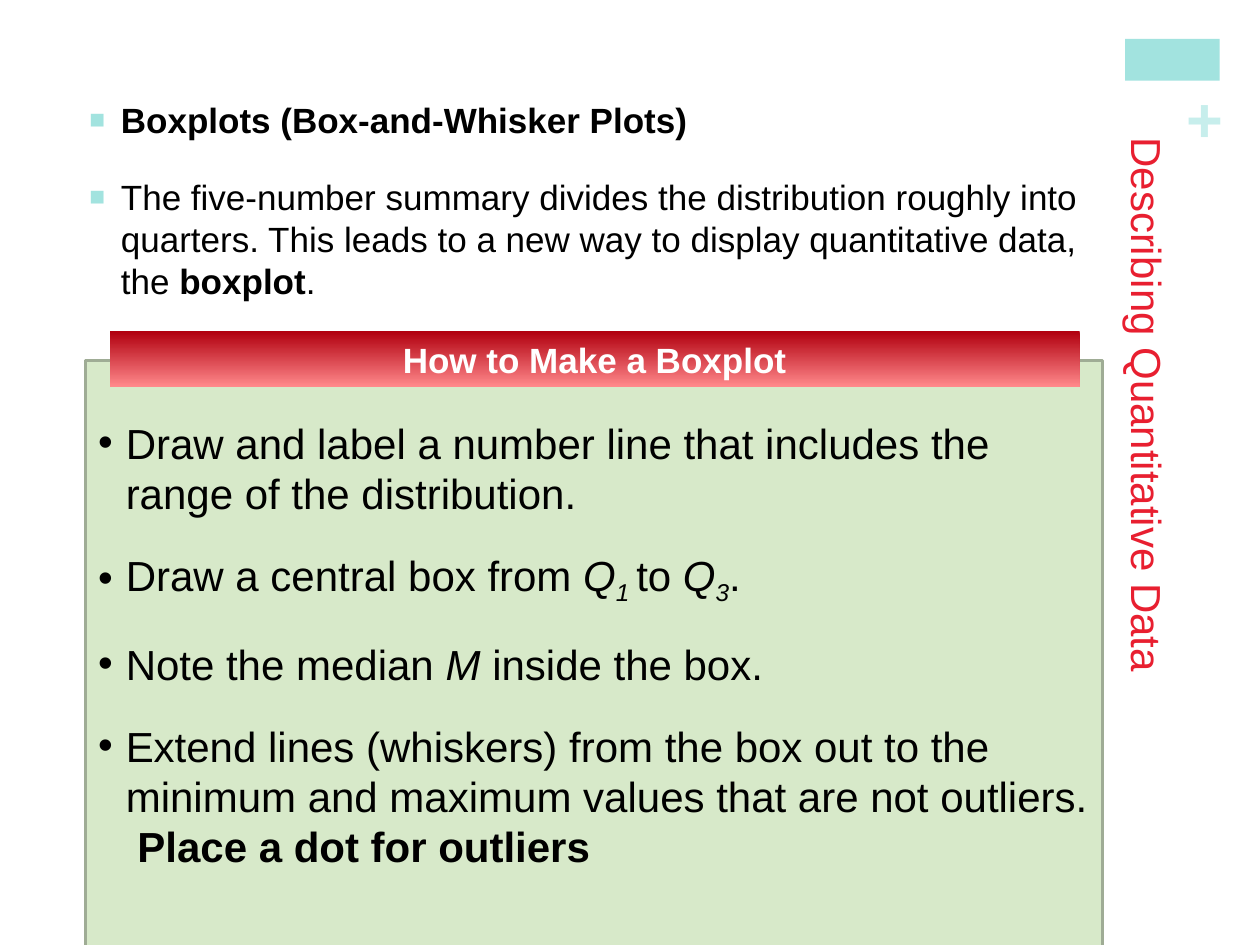
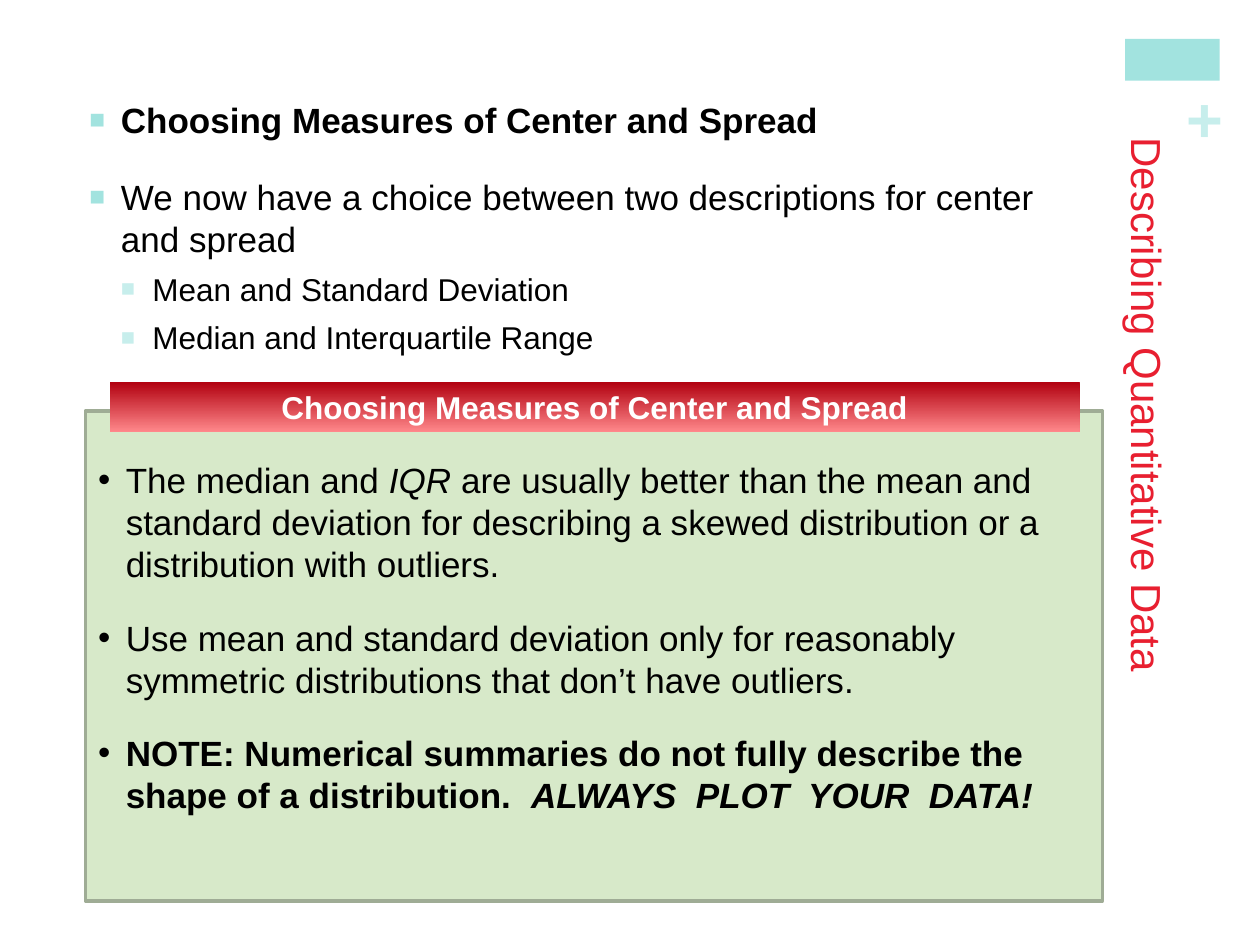
from pptx import Presentation
from pptx import util as u
from pptx.dml.color import RGBColor
from pptx.enum import shapes, text
from pptx.oxml.ns import qn
from lxml import etree

PX = 9144  # one px is a hundredth of an inch
FONT = "Arial"
COLORS = {
    "black": "000000", "white": "FFFFFF", "title": "E81F30",
    "teal": "A2E3DF", "pale teal": "C7EEEC",
    "panel": "D7E9C9", "panel line": "9FAC95",
    "banner top": "B1000F", "banner bottom": "FF888B",
}
PANEL_LEFT, PANEL_WIDTH = 68, 807
BANNER_LEFT, BANNER_WIDTH = 87, 770


def px(*lengths):
    return [u.Emu(length * PX) for length in lengths]


def color(name):
    return RGBColor.from_string(COLORS[name])


def set_bullet(paragraph, char, indent, hang, tint=None, percent=100):
    properties = paragraph._p.get_or_add_pPr()
    properties.set("marL", str(indent * PX))
    properties.set("indent", str(-hang * PX))
    if tint:
        holder = etree.SubElement(properties, qn("a:buClr"))
        etree.SubElement(holder, qn("a:srgbClr"), val=COLORS[tint])
    etree.SubElement(properties, qn("a:buSzPct"), val=str(percent * 1000))
    etree.SubElement(properties, qn("a:buFont"), typeface=FONT)
    etree.SubElement(properties, qn("a:buChar"), char=char)


def write(paragraph, runs, size=20, tint="black", bold=False, before=0, after=0,
          align=text.PP_ALIGN.LEFT, bullet=None):
    """Runs are plain strings or (string, flags): b bold, i italic, s subscript."""
    paragraph.alignment = align
    paragraph.space_before, paragraph.space_after = u.Pt(before), u.Pt(after)
    if bullet:
        set_bullet(paragraph, **bullet)
    for item in [runs] if isinstance(runs, str) else runs:
        content, flags = (item, "") if isinstance(item, str) else item
        run = paragraph.add_run()
        run.text = content
        font = run.font
        font.name, font.size, font.color.rgb = FONT, u.Pt(size), color(tint)
        font.bold, font.italic = bold or "b" in flags, "i" in flags
        if "s" in flags:
            font._element.set("baseline", "-25000")


def set_frame(shape, left=10, top=5, right=10, bottom=5, anchor=text.MSO_ANCHOR.TOP):
    frame = shape.text_frame
    frame.word_wrap = True
    frame.auto_size = text.MSO_AUTO_SIZE.NONE
    frame.vertical_anchor = anchor
    (frame.margin_left, frame.margin_top,
     frame.margin_right, frame.margin_bottom) = px(left, top, right, bottom)
    return frame


def paragraphs(frame):
    yield frame.paragraphs[0]
    while True:
        yield frame.add_paragraph()


def add_rectangle(slide, box, fill=None, line=None):
    shape = slide.shapes.add_shape(shapes.MSO_SHAPE.RECTANGLE, *px(*box))
    shape.shadow.inherit = False
    if fill:
        shape.fill.solid()
        shape.fill.fore_color.rgb = color(fill)
    if line:
        shape.line.color.rgb, shape.line.width = color(line), u.Pt(2)
    else:
        shape.line.fill.background()
    return shape


def add_corner_mark(slide):
    add_rectangle(slide, (893, 31, 75, 33), "teal")
    plus = slide.shapes.add_textbox(*px(942, 63, 28, 58))
    frame = set_frame(plus, 0, 0, 0, 0)
    frame.word_wrap = False
    write(frame.paragraphs[0], "+", size=36, tint="pale teal", bold=True)


def add_side_title(slide):
    title = slide.shapes.title
    title.left, title.top, title.width, title.height = px(874, 104, 74, 566)
    frame = set_frame(title, anchor=text.MSO_ANCHOR.MIDDLE)
    frame._txBody.bodyPr.set("vert", "eaVert")
    write(frame.paragraphs[0], "Describing Quantitative Data", size=24, tint="title")


def add_intro(slide, heading, statement, choices=()):
    box = slide.shapes.add_textbox(*px(66, 65, PANEL_WIDTH, 238))
    lines = paragraphs(set_frame(box, left=5, top=13, right=5))
    square = dict(char="■", indent=25, hang=25, tint="teal", percent=75)
    write(next(lines), heading, bold=True, bullet=square)
    write(next(lines), statement, before=20, bullet=square)
    for choice in choices:
        write(next(lines), choice, size=18, before=6,
              bullet=dict(square, indent=50, tint="pale teal"))


def add_panel(slide, top, height, size, points):
    panel = add_rectangle(slide, (PANEL_LEFT, top, PANEL_WIDTH, height),
                          "panel", "panel line")
    # The first point starts one line below the top edge
    frame = set_frame(panel, top=5 + round(size * 5 / 3))
    for paragraph, point in zip(paragraphs(frame), points):
        write(paragraph, point, size=size, after=18,
              bullet=dict(char="•", indent=22, hang=22))


def add_banner(slide, top, height, caption, size):
    banner = add_rectangle(slide, (BANNER_LEFT, top, BANNER_WIDTH, height))
    banner.fill.gradient()
    banner.fill.gradient_angle = 270
    for stop, name, position in zip(banner.fill.gradient_stops,
                                    ("banner top", "banner bottom"), (0, 1)):
        stop.color.rgb, stop.position = color(name), position
    frame = set_frame(banner, anchor=text.MSO_ANCHOR.MIDDLE)
    write(frame.paragraphs[0], caption, size=size, tint="white", bold=True,
          align=text.PP_ALIGN.CENTER)


def add_slide(presentation, intro, panel, banner):
    slide = presentation.slides.add_slide(presentation.slide_layouts[5])
    add_corner_mark(slide)
    add_intro(slide, **intro)
    add_panel(slide, **panel)
    add_banner(slide, **banner)
    add_side_title(slide)


def main():
    presentation = Presentation()
    presentation.slide_width, presentation.slide_height = px(1000, 750)

    # Making a boxplot
    add_slide(
        presentation,
        intro=dict(
            heading="Boxplots (Box-and-Whisker Plots)",
            statement=["The five-number summary divides the distribution roughly into "
                       "quarters. This leads to a new way to display quantitative "
                       "data, the ", ("boxplot", "b"), "."]),
        panel=dict(top=286, height=475, size=24, points=[
            "Draw and label a number line that includes the range of the distribution.",
            ["Draw a central box from ", ("Q", "i"), ("1 ", "is"), "to ",
             ("Q", "i"), ("3", "is"), "."],
            ["Note the median ", ("M ", "i"), "inside the box."],
            ["Extend lines (whiskers) from the box out to the minimum and maximum "
             "values that are not outliers.  ", ("Place a dot for outliers", "b")],
        ]),
        banner=dict(top=263, height=44, caption="How to Make a Boxplot", size=20))

    # Choosing measures
    choosing = "Choosing Measures of Center and Spread"
    add_slide(
        presentation,
        intro=dict(
            heading=choosing,
            statement="We now have a choice between two descriptions for center "
                      "and spread",
            choices=["Mean and Standard Deviation", "Median and Interquartile Range"]),
        panel=dict(top=326, height=389, size=20, points=[
            ["The median and ", ("IQR ", "i"),
             "are usually better than the mean and standard deviation for describing "
             "a skewed distribution or a distribution with outliers."],
            "Use mean and standard deviation only for reasonably symmetric "
            "distributions that don’t have outliers.",
            [("NOTE: Numerical summaries do not fully describe the shape of a "
              "distribution.  ", "b"), ("ALWAYS  PLOT  YOUR  DATA!", "bi")],
        ]),
        banner=dict(top=303, height=40, caption=choosing, size=18))

    presentation.save("out.pptx")


if __name__ == "__main__":
    main()
